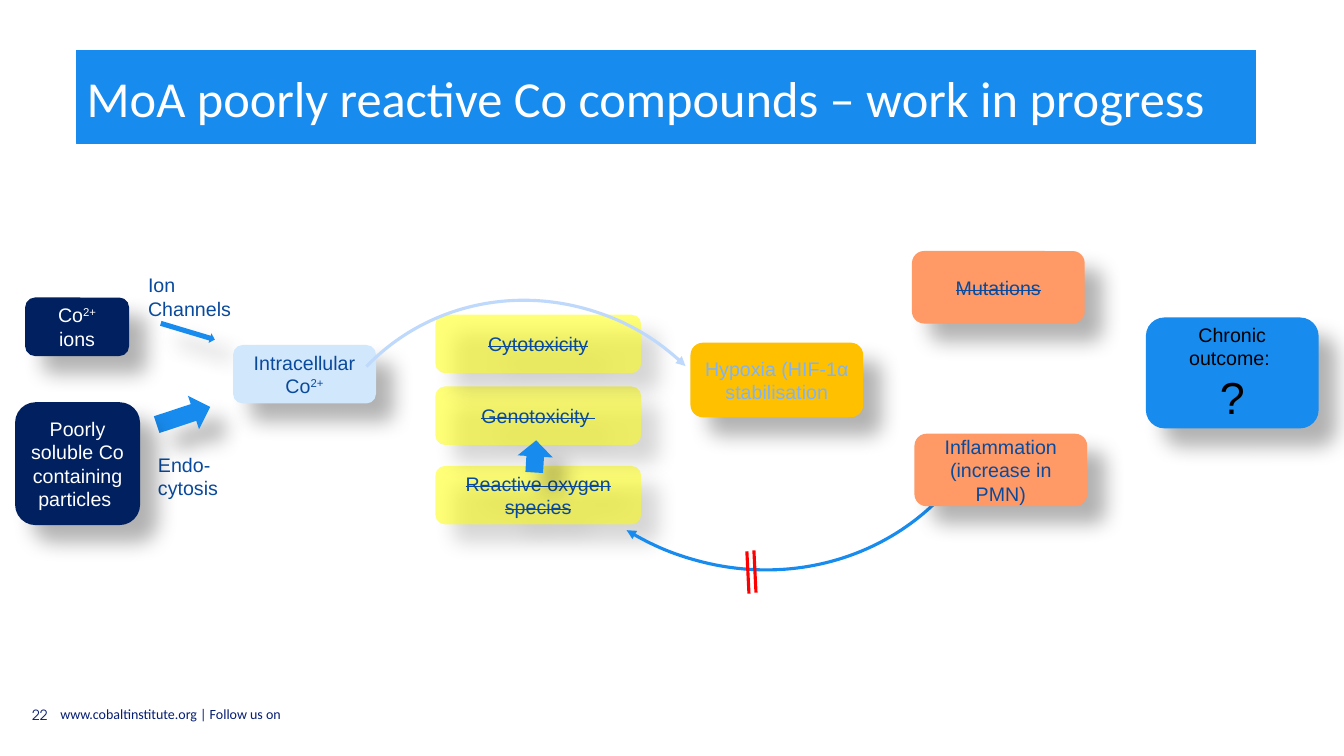
"""Builds the slide on the mode of action of poorly reactive cobalt compounds."""
from lxml import etree
from pptx import Presentation
from pptx.dml.color import RGBColor
from pptx.enum import shapes, text
from pptx.oxml import ns
from pptx.util import Pt

COLORS = {
    "navy": "002060", "blue": "188BEE", "ice": "D1E8FC", "yellow": "FFFF00",
    "amber": "FFC000", "orange": "FF9966", "ink": "0A4A9C", "pale": "7EB3F7",
    "sky": "BED9FB", "red": "FF0000", "white": "FFFFFF", "black": "000000",
    "footer": "051D72",
}
SUPER = {"baseline": "30000"}
STRUCK = {"strike": "sngStrike"}
PRESET = shapes.MSO_SHAPE
ALIGN = text.PP_ALIGN
MIDDLE = text.MSO_ANCHOR.MIDDLE


def rgb(name):
    """Return the named colour."""
    return RGBColor.from_string(COLORS[name])


def child(parent, tag, **attributes):
    """Append a DrawingML element with attributes."""
    element = etree.SubElement(parent, ns.qn(tag))
    for key, value in attributes.items():
        element.set(key, str(value))
    return element


def write(frame, paragraphs, color, size=14, font="Arial", align=ALIGN.LEFT, **layout):
    """Fill a text frame with paragraphs of (words, run attributes) pairs."""
    for key, value in {"word_wrap": True, **layout}.items():
        setattr(frame, key, value)
    for index, pieces in enumerate(paragraphs):
        paragraph = frame.add_paragraph() if index else frame.paragraphs[0]
        paragraph.alignment = align
        for words, attributes in pieces:
            run = paragraph.add_run()
            run.text = words
            for key, value in {"name": font, "size": Pt(size)}.items():
                setattr(run.font, key, value)
            run.font.color.rgb = rgb(color)
            for key, value in attributes.items():
                run.font._element.set(key, value)


def cast_shadow(shape):
    """Give a shape a soft shadow to the lower right."""
    shape.shadow.inherit = False
    effects = shape._element.spPr.find(ns.qn("a:effectLst"))
    shadow = child(effects, "a:outerShdw", blurRad=Pt(15), dist=Pt(18),
                   dir=45 * 60000, algn="tl", rotWithShape=0)
    child(child(shadow, "a:srgbClr", val=COLORS["black"]), "a:alpha", val=30000)


def add_solid(slide, preset, box, fill, rotation=0):
    """Add a filled shape with a shadow and no outline."""
    solid = slide.shapes.add_shape(preset, *map(Pt, box))
    solid.rotation = rotation
    solid.fill.solid()
    solid.fill.fore_color.rgb = rgb(fill)
    solid.line.fill.background()
    cast_shadow(solid)
    return solid


def add_card(slide, box, fill, paragraphs, color="ink", opacity=100):
    """Add a rounded box with centred text."""
    card = add_solid(slide, PRESET.ROUNDED_RECTANGLE, box, fill)
    if opacity < 100:
        tint = card._element.spPr.find(".//" + ns.qn("a:srgbClr"))
        child(tint, "a:alpha", val=opacity * 1000)
    write(card.text_frame, paragraphs, color, align=ALIGN.CENTER, vertical_anchor=MIDDLE)


def add_label(slide, box, paragraphs, color="ink", **layout):
    """Add free-standing text."""
    label = slide.shapes.add_textbox(*map(Pt, box))
    write(label.text_frame, paragraphs, color, **layout)


def add_arc(slide, box, flip, start, color):
    """Add a curved arrow whose head sits at its start."""
    arc = slide.shapes.add_shape(PRESET.ARC, *map(Pt, box))
    arc.rotation = 223.8
    arc._element.spPr.xfrm.set(flip, "1")
    arc.adjustments[0] = start
    arc.adjustments[1] = 0
    arc.shadow.inherit = False
    arc.fill.background()
    arc.line.color.rgb = rgb(color)
    arc.line.width = Pt(2.25)
    child(arc.line._get_or_add_ln(), "a:headEnd", type="triangle")


def add_cut(slide, left, top):
    """Add one slanted stroke that marks a blocked pathway."""
    ends = (left, top, left + 1.5, top + 30.25)
    cut = slide.shapes.add_connector(shapes.MSO_CONNECTOR.STRAIGHT, *map(Pt, ends))
    cut.line.color.rgb = rgb("red")
    cut.line.width = Pt(2.25)
    child(cut._element.spPr, "a:effectLst")


def add_title(slide, words):
    """Format the title placeholder as a blue band."""
    title = slide.shapes.title
    band = {"left": 54.7, "top": 36, "width": 842.4, "height": 66.5}
    for key, value in band.items():
        setattr(title, key, Pt(value))
    title.fill.solid()
    title.fill.fore_color.rgb = rgb("blue")
    title.line.color.rgb = rgb("blue")
    title.line.width = Pt(0.75)
    write(title.text_frame, [[(words, {})]], "white", size=36, font="Calibri",
          vertical_anchor=MIDDLE, auto_size=text.MSO_AUTO_SIZE.NONE)


def main():
    """Build and save the slide."""
    deck = Presentation()
    deck.slide_width, deck.slide_height = Pt(960), Pt(540)
    slide = deck.slides.add_slide(deck.slide_layouts[5])
    add_title(slide, "MoA poorly reactive Co compounds – work in progress")

    add_label(slide, (13, 496, 28, 29), [[("22", {})]], "footer", size=10,
              font="TeX Gyre Adventor", align=ALIGN.RIGHT, vertical_anchor=MIDDLE)
    add_label(slide, (36, 500.4, 265.7, 19.4),
              [[("www.cobaltinstitute.org | Follow us on", {})]],
              "footer", size=10, font="Calibri")

    add_card(slide, (18, 212.5, 74.2, 41.8), "navy",
             [[("Co", {}), ("2+", SUPER), (" ions", {})]], "white")
    uptake_arrows = [((114, 233.2, 40.3, 7.2), 16.7), ((110.9, 284.4, 40.3, 25.2), 341.7)]
    for box, rotation in uptake_arrows:
        add_solid(slide, PRESET.RIGHT_ARROW, box, "blue", rotation)
    uptake_routes = [((98.7, 191.5, 74.2, 41), ("Ion", "Channels")),
                     ((105.8, 319.7, 57.6, 41), ("Endo-", "cytosis"))]
    for box, lines in uptake_routes:
        add_label(slide, box, [[(line, {})] for line in lines], word_wrap=False)
    add_card(slide, (166.5, 246.4, 102.1, 41.8), "ice",
             [[("Intracellular Co", {}), ("2+", SUPER)]])

    ruled_out = [("Reactive oxygen species", 332.8), ("Genotoxicity ", 276), ("Cytotoxicity", 224.8)]
    for effect, top in ruled_out:
        add_card(slide, (311, top, 147, 41.8), "yellow", [[(effect, STRUCK)]], opacity=53)

    add_card(slide, (493.2, 244.8, 123.4, 53.3), "amber",
             [[("Hypoxia (HIF-1α stabilisation", {})]], "pale")
    add_card(slide, (818.5, 226.8, 123.4, 79.2), "blue",
             [[("Chronic outcome: ", {})], [("?", {"sz": "3200"})]], "black")

    add_arc(slide, (347.8, 46.1, 377.3, 355.7), "flipH", 170.36, "blue")
    add_card(slide, (651.4, 179.3, 123.4, 51.8), "orange", [[("Mutations", STRUCK)]])
    add_card(slide, (653.2, 309.8, 123.4, 51.8), "orange",
             [[("Inflammation (increase in PMN)", {})]])
    add_solid(slide, PRESET.RIGHT_ARROW, (370.8, 313.4, 23, 25.2), "blue", 273.5)
    add_arc(slide, (216, 217.4, 328.3, 316.1), "flipV", 161.98, "sky")
    add_card(slide, (10.8, 287.3, 89.3, 87.8), "navy",
             [[("Poorly soluble Co containing particles ", {})]], "white")
    for left, top in ((533.5, 393.8), (538.5, 393.1)):
        add_cut(slide, left, top)

    deck.save("out.pptx")


if __name__ == "__main__":
    main()
